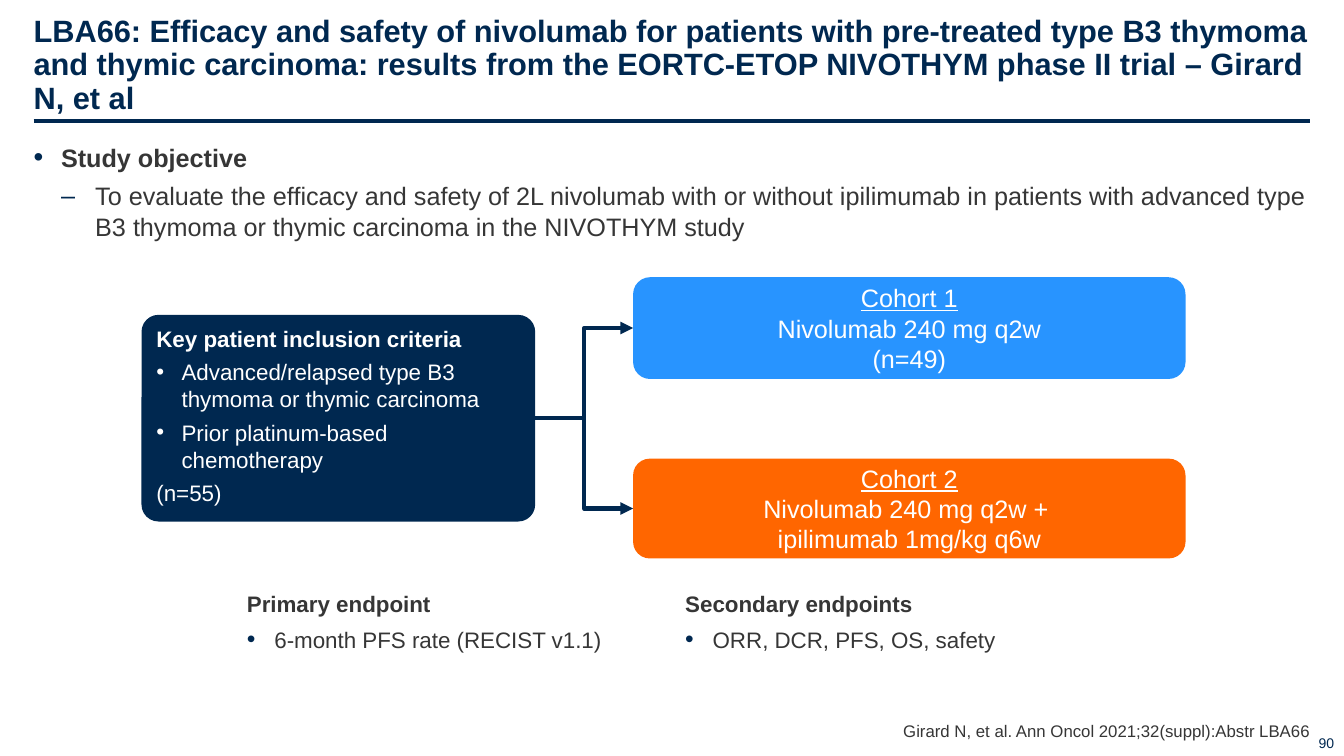
from dataclasses import dataclass

from lxml import etree
from pptx import Presentation
from pptx import util as u
from pptx.dml.color import RGBColor
from pptx.enum import shapes, text
from pptx.oxml.ns import qn

COLOURS = {
    "navy": "002850",
    "grey": "363636",
    "white": "FFFFFF",
    "blue": "2894FF",
    "orange": "FF6600",
}
FONT = "Arial"
LEFT, CENTRE, RIGHT = text.PP_ALIGN.LEFT, text.PP_ALIGN.CENTER, text.PP_ALIGN.RIGHT
TOP, MIDDLE, BOTTOM = text.MSO_ANCHOR.TOP, text.MSO_ANCHOR.MIDDLE, text.MSO_ANCHOR.BOTTOM


@dataclass(frozen=True)
class Bullet:
    char: str
    margin: float
    hang: float
    colour: str = ""
    percent: int = 100


@dataclass(frozen=True)
class Line:
    words: str
    bold: bool = False
    underline: bool = False
    bullet: Bullet | None = None


@dataclass(frozen=True)
class Block:
    box: tuple[float, float, float, float]
    lines: tuple[Line, ...]
    size: float
    colour: str = "grey"
    align: text.PP_ALIGN = LEFT
    anchor: text.MSO_ANCHOR = TOP
    insets: tuple[float, float, float, float] = (0, 3.6, 0, 3.6)
    after: float = 0
    spacing: float = 1.0
    fill: str = ""
    corner: float = 0


DOT = Bullet("•", 19.6, 19.6, "navy", 110)
DASH = Bullet("–", 44, 24.4, "navy")
WHITE_DOT = Bullet("•", 18, 18)

TITLE = Block(
    (24, 8.6, 912, 74.2),
    (Line("LBA66: Efficacy and safety of nivolumab for patients with pre-treated type B3 "
          "thymoma and thymic carcinoma: results from the EORTC-ETOP NIVOTHYM phase II "
          "trial – Girard N, et al", bold=True),),
    22, "navy", anchor=BOTTOM, insets=(0, 3.6, 0, 0), spacing=0.9)

TEXTS = (
    Block((24, 97.9, 912, 398), (
        Line("Study objective", bold=True, bullet=DOT),
        Line("To evaluate the efficacy and safety of 2L nivolumab with or without ipilimumab "
             "in patients with advanced type B3 thymoma or thymic carcinoma in the "
             "NIVOTHYM study", bullet=DASH)), 18, after=6),
    Block((176.4, 418.3, 260, 57.6), (
        Line("Primary endpoint", bold=True),
        Line("6-month PFS rate (RECIST v1.1)", bullet=DOT)), 16, after=6),
    Block((482.4, 418.3, 364.3, 56.2), (
        Line("Secondary endpoints", bold=True),
        Line("ORR, DCR, PFS, OS, safety", bullet=DOT)), 16,
        insets=(7.2, 3.6, 7.2, 3.6), after=6),
    Block((502.6, 513.4, 433.4, 15.8),
          (Line("Girard N, et al. Ann Oncol 2021;32(suppl):Abstr LBA66"),),
          12, align=RIGHT, anchor=BOTTOM, insets=(0, 0, 0, 0)),
    Block((913, 511.2, 47, 28.8), (Line("90"),), 10, "navy", RIGHT, BOTTOM,
          (7.2, 3.6, 7.2, 3.6)),
)

CRITERIA = Block((101.1, 224.9, 281.2, 147.6), (
    Line("Key patient inclusion criteria", bold=True),
    Line("Advanced/relapsed type B3 thymoma or thymic carcinoma", bullet=WHITE_DOT),
    Line("Prior platinum-based chemotherapy", bullet=WHITE_DOT),
    Line("(n=55)")), 16, "white", insets=(7.2, 3.6, 7.2, 3.6), after=4.8,
    fill="navy", corner=0.082)


def cohort(top: float, height: float, fill: str, *lines: Line) -> Block:
    return Block((452.2, top, 394.6, height), lines, 18, "white", CENTRE, MIDDLE,
                 (7.2, 0, 7.2, 0), fill=fill, corner=0.167)


COHORTS = (
    cohort(198, 72.7, "blue", Line("Cohort 1", underline=True),
           Line("Nivolumab 240 mg q2w"), Line("(n=49)")),
    cohort(327.6, 71.3, "orange", Line("Cohort 2", underline=True),
           Line("Nivolumab 240 mg q2w + \nipilimumab 1mg/kg q6w")),
)


def rgb(name: str) -> RGBColor:
    return RGBColor.from_string(COLOURS[name])


def add_bullet(p, bullet: Bullet) -> None:
    pPr = p._p.get_or_add_pPr()
    pPr.set("marL", str(u.Pt(bullet.margin)))
    pPr.set("indent", str(-u.Pt(bullet.hang)))
    if bullet.colour:
        clr = etree.SubElement(pPr, qn("a:buClr"))
        etree.SubElement(clr, qn("a:srgbClr"), val=COLOURS[bullet.colour])
    etree.SubElement(pPr, qn("a:buSzPct"), val=str(bullet.percent * 1000))
    etree.SubElement(pPr, qn("a:buFont"), typeface=FONT)
    etree.SubElement(pPr, qn("a:buChar"), char=bullet.char)


def write(tf, block: Block) -> None:
    tf.word_wrap = True
    tf.auto_size = text.MSO_AUTO_SIZE.NONE
    tf.vertical_anchor = block.anchor
    tf.margin_left, tf.margin_top, tf.margin_right, tf.margin_bottom = map(u.Pt, block.insets)
    for i, line in enumerate(block.lines):
        p = tf.add_paragraph() if i else tf.paragraphs[0]
        if line.bullet:
            add_bullet(p, line.bullet)
        p.alignment = block.align
        p.line_spacing = block.spacing
        p.space_before = u.Pt(0)
        p.space_after = u.Pt(block.after)
        for j, words in enumerate(line.words.split("\n")):
            if j:
                p.add_line_break()
            r = p.add_run()
            r.text = words
            r.font.name = FONT
            r.font.size = u.Pt(block.size)
            r.font.bold = line.bold
            r.font.underline = line.underline
            r.font.color.rgb = rgb(block.colour)


def add_title(s, block: Block) -> None:
    sp = s.shapes.title
    sp.left, sp.top, sp.width, sp.height = map(u.Pt, block.box)
    write(sp.text_frame, block)


def add_text(s, block: Block) -> None:
    write(s.shapes.add_textbox(*map(u.Pt, block.box)).text_frame, block)


def add_card(s, block: Block):
    sp = s.shapes.add_shape(shapes.MSO_SHAPE.ROUNDED_RECTANGLE, *map(u.Pt, block.box))
    sp.shadow.inherit = False
    sp.adjustments[0] = block.corner
    sp.fill.solid()
    sp.fill.fore_color.rgb = rgb(block.fill)
    sp.line.fill.background()
    write(sp.text_frame, block)
    return sp


def add_line(s, kind: shapes.MSO_CONNECTOR, ends: tuple[float, ...], width: float):
    line = s.shapes.add_connector(kind, *map(u.Pt, ends))
    line.line.color.rgb = rgb("navy")
    line.line.width = u.Pt(width)
    etree.SubElement(line._element.spPr, qn("a:effectLst"))
    return line


def add_arrow(s, source, target) -> None:
    arrow = add_line(s, shapes.MSO_CONNECTOR.ELBOW, (0, 0, 0, 0), 3)
    arrow.begin_connect(source, 3)
    arrow.end_connect(target, 1)
    etree.SubElement(arrow.line._get_or_add_ln(), qn("a:tailEnd"), type="triangle")


def main() -> None:
    prs = Presentation()
    prs.slide_width, prs.slide_height = u.Pt(960), u.Pt(540)
    s = prs.slides.add_slide(prs.slide_layouts[5])
    add_line(s, shapes.MSO_CONNECTOR.STRAIGHT, (24, 86.4, 936, 86.4), 2.25)
    add_title(s, TITLE)
    for block in TEXTS:
        add_text(s, block)
    criteria = add_card(s, CRITERIA)
    for block in COHORTS:
        add_arrow(s, criteria, add_card(s, block))
    prs.save("out.pptx")


if __name__ == "__main__":
    main()
